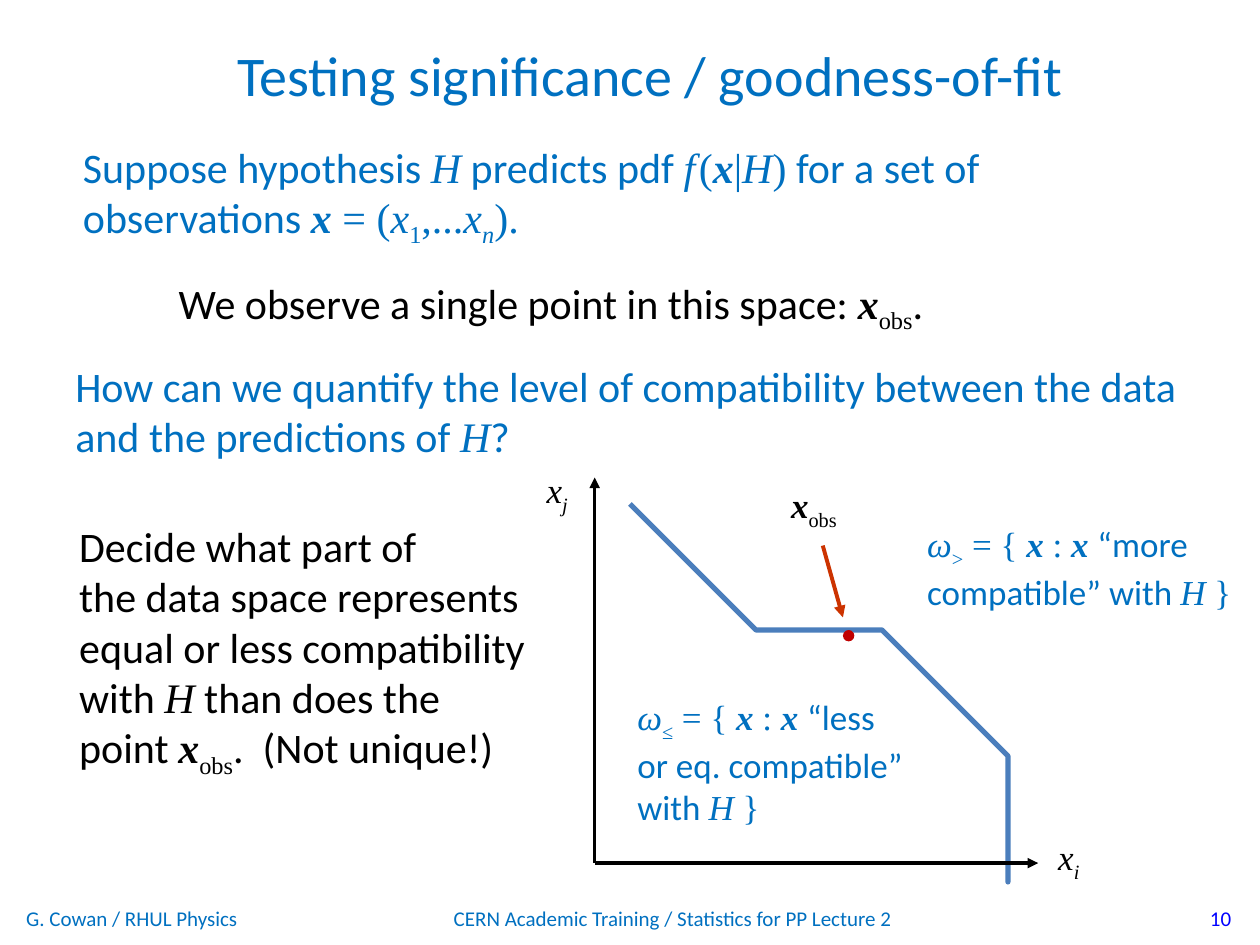
"""Build the slide on testing significance and goodness-of-fit."""
import pptx
import pptx.util
import pptx.dml.color
import pptx.enum.shapes
import pptx.enum.text
import pptx.oxml.ns
from lxml import etree

Inches, Pt = pptx.util.Inches, pptx.util.Pt
ALIGN = pptx.enum.text.PP_ALIGN
ANCHOR = pptx.enum.text.MSO_ANCHOR
BLUE, BLACK, PAGE_BLUE = "0070C0", "000000", "0000FF"
CURVE_BLUE, ARROW_RED, POINT_RED = "4B7EBC", "CC3300", "C00000"

# Run style letters: t Times, i italic, b bold, s subscript, n narrow gap
H = ("H", "ti")
X = ("x", "tbi")
X_OBS = [X, ("obs", "ts")]
X_SET = [(" = { ", "t"), X, (" : ", "t"), ("x ", "tbi")]
CLOSE = (" }", "t")

FOOTERS = [
    ((7.54, 7.09, 2.33, 0.4), PAGE_BLUE, ALIGN.RIGHT, "10"),
    ((0.11, 7.09, 2.33, 0.4), BLUE, ALIGN.LEFT, "G. Cowan / RHUL Physics"),
    ((2.26, 7.09, 6.16, 0.4), BLUE, ALIGN.CENTER,
     "CERN Academic Training / Statistics for PP Lecture 2"),
]
TITLE = "Testing significance / goodness-of-fit"

# Place, size, colour, wrapping, paragraphs
STATEMENTS = [
    ((0.56, 1.07, 7.45, 0.91), 24, BLUE, False, [
        [("Suppose hypothesis ", ""), H, (" predicts pdf ", ""), ("f", "ti"),
         (" ", "tn"), ("(", "t"), X, ("|", "t"), H, (")", "t"),
         (" for a set of", "")],
        [("observations ", ""), X, (" = (", "t"), ("x", "ti"), ("1", "ts"),
         (",...", "t"), ("x", "ti"), ("n", "tis"), (").", "t")]]),
    ((1.32, 2.15, 6.28, 0.5), 24, BLACK, False, [
        [("We observe a single point in this space: ", ""), *X_OBS, (".", "")]]),
    ((0.5, 2.81, 9.27, 0.91), 24, BLUE, True, [
        [("How can we quantify the level of compatibility between the data "
          "and the predictions of ", ""), H, ("?", "")]]),
    ((0.53, 4.08, 3.82, 2.12), 24, BLACK, True, [
        [("Decide what part of", "")],
        [("the data space represents equal or less compatibility with ", ""), H,
         (" than does the point ", ""), *X_OBS, (".  (Not unique!)", "")]]),
]
PLOT_LABELS = [
    ((4.96, 5.47, 2.88, 1.11), 20, BLUE, True, [
        [("ω", "ti"), ("≤", "ts"), *X_SET, ("“less", "")],
        [("or eq. compatible”", "")],
        [("with ", ""), H, CLOSE]]),
    ((7.26, 4.1, 2.71, 0.77), 20, BLUE, True, [
        [("ω", "ti"), (">", "ts"), *X_SET, ("“more", "")],
        [("compatible” with ", ""), H, CLOSE]]),
    ((6.18, 3.79, 0.6, 0.44), 20, BLACK, False, [X_OBS]),
    ((8.3, 6.58, 0.38, 0.44), 20, BLACK, False, [[("x", "ti"), ("i", "tis")]]),
    ((4.24, 3.67, 0.38, 0.44), 20, BLACK, False, [[("x", "ti"), ("j", "tis")]]),
]
BOUNDARY = [
    (5.04, 4.01), (5.08, 4.1), (5.11, 4.12), (5.14, 4.19), (5.21, 4.26),
    (5.26, 4.32), (5.3, 4.35), (5.36, 4.39), (5.38, 4.42), (5.45, 4.47),
    (5.52, 4.51), (5.58, 4.56), (5.63, 4.61), (5.7, 4.64), (5.76, 4.69),
    (5.83, 4.72), (5.86, 4.74), (5.93, 4.76), (5.96, 4.79), (6.06, 4.82),
    (6.08, 4.85), (6.15, 4.87), (6.23, 4.89), (6.3, 4.93), (6.43, 4.97),
    (6.55, 5), (6.65, 5.02), (6.8, 5.07), (6.83, 5.08), (6.94, 5.14),
    (7.04, 5.19), (7.11, 5.23), (7.18, 5.26), (7.25, 5.31), (7.29, 5.32),
    (7.35, 5.37), (7.4, 5.42), (7.44, 5.44), (7.55, 5.55), (7.61, 5.6),
    (7.65, 5.66), (7.69, 5.68), (7.74, 5.74), (7.79, 5.8), (7.8, 5.83),
    (7.87, 5.89), (7.92, 5.95), (7.94, 5.99), (7.99, 6.04), (8.04, 6.1),
    (8.06, 6.16), (8.08, 6.19), (8.12, 6.25), (8.13, 6.29), (8.15, 6.32),
    (8.17, 6.36), (8.19, 6.39), (8.21, 6.47), (8.23, 6.5), (8.25, 6.52),
    (8.24, 6.49),
]
ORIGIN = (4.72, 6.85)
ARROWS = [
    ((6.53, 4.33), (6.69, 4.9), ARROW_RED, 2.25),
    (ORIGIN, (8.24, 6.85), BLACK, 2),
    (ORIGIN, (4.72, 3.79), BLACK, 2),
]
OBSERVED_POINT = (6.69, 5, 0.09, 0.09)


def rgb(value):
    return pptx.dml.color.RGBColor.from_string(value)


def add_text(slide, place, size, color, paragraphs, wrap=True,
             align=ALIGN.LEFT, anchor=ANCHOR.TOP):
    frame = slide.shapes.add_textbox(*map(Inches, place)).text_frame
    frame.word_wrap = wrap
    frame.vertical_anchor = anchor
    for index, pieces in enumerate(paragraphs):
        paragraph = frame.add_paragraph() if index else frame.paragraphs[0]
        paragraph.alignment = align
        for words, style in pieces:
            run = paragraph.add_run()
            run.text = words
            run.font.name = "Times New Roman" if "t" in style else "Calibri"
            run.font.size = Pt(8 if "n" in style else size)
            run.font.bold = "b" in style
            run.font.italic = "i" in style
            run.font.color.rgb = rgb(color)
            if "s" in style:
                run.font._element.set("baseline", "-25000")


def add_arrow(slide, start, end, color, width):
    arrow = slide.shapes.add_connector(
        pptx.enum.shapes.MSO_CONNECTOR.STRAIGHT,
        *map(Inches, start + end))
    arrow.line.color.rgb = rgb(color)
    arrow.line.width = Pt(width)
    qn = pptx.oxml.ns.qn
    etree.SubElement(arrow.line._get_or_add_ln(), qn("a:tailEnd"), type="triangle")
    etree.SubElement(arrow._element.spPr, qn("a:effectLst"))


def add_boundary(slide):
    builder = slide.shapes.build_freeform(*BOUNDARY[0], scale=Inches(1))
    builder.add_line_segments(BOUNDARY[1:], close=False)
    boundary = builder.convert_to_shape()
    boundary.shadow.inherit = False
    boundary.fill.background()
    boundary.line.color.rgb = rgb(CURVE_BLUE)
    boundary.line.width = Pt(3)


def add_observed_point(slide):
    point = slide.shapes.add_shape(
        pptx.enum.shapes.MSO_SHAPE.OVAL, *map(Inches, OBSERVED_POINT))
    point.shadow.inherit = False
    point.fill.solid()
    point.fill.fore_color.rgb = rgb(POINT_RED)
    point.line.fill.background()


def main():
    deck = pptx.Presentation()
    deck.slide_width, deck.slide_height = Inches(10), Inches(7.5)
    slide = deck.slides.add_slide(deck.slide_layouts[6])
    for place, color, align, words in FOOTERS:
        add_text(slide, place, 12, color, [[(words, "")]],
                 align=align, anchor=ANCHOR.MIDDLE)
    add_text(slide, (1.38, 0.27, 7.56, 0.47), 32, BLUE, [[(TITLE, "")]],
             align=ALIGN.CENTER)
    for place, size, color, wrap, paragraphs in STATEMENTS:
        add_text(slide, place, size, color, paragraphs, wrap)
    add_boundary(slide)
    for arrow in ARROWS:
        add_arrow(slide, *arrow)
    add_observed_point(slide)
    for place, size, color, wrap, paragraphs in PLOT_LABELS:
        add_text(slide, place, size, color, paragraphs, wrap)
    deck.save("out.pptx")


if __name__ == "__main__":
    main()
